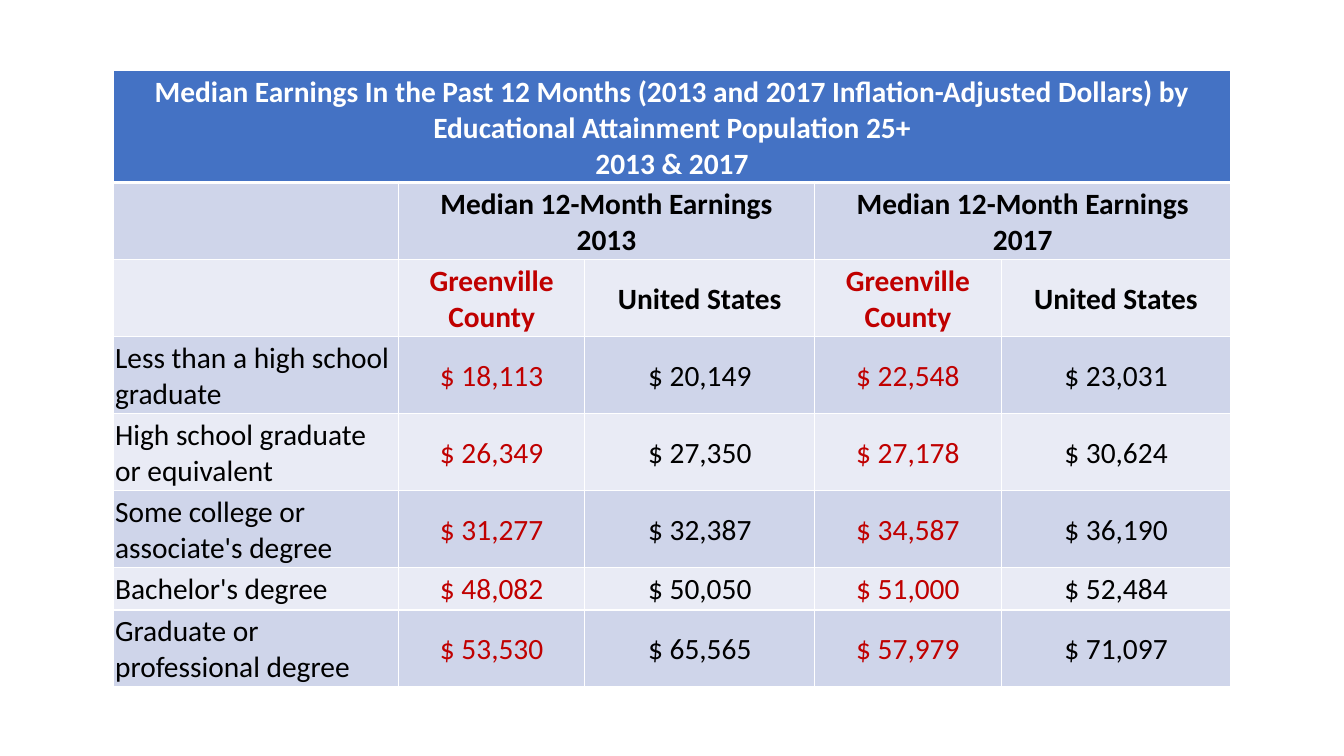
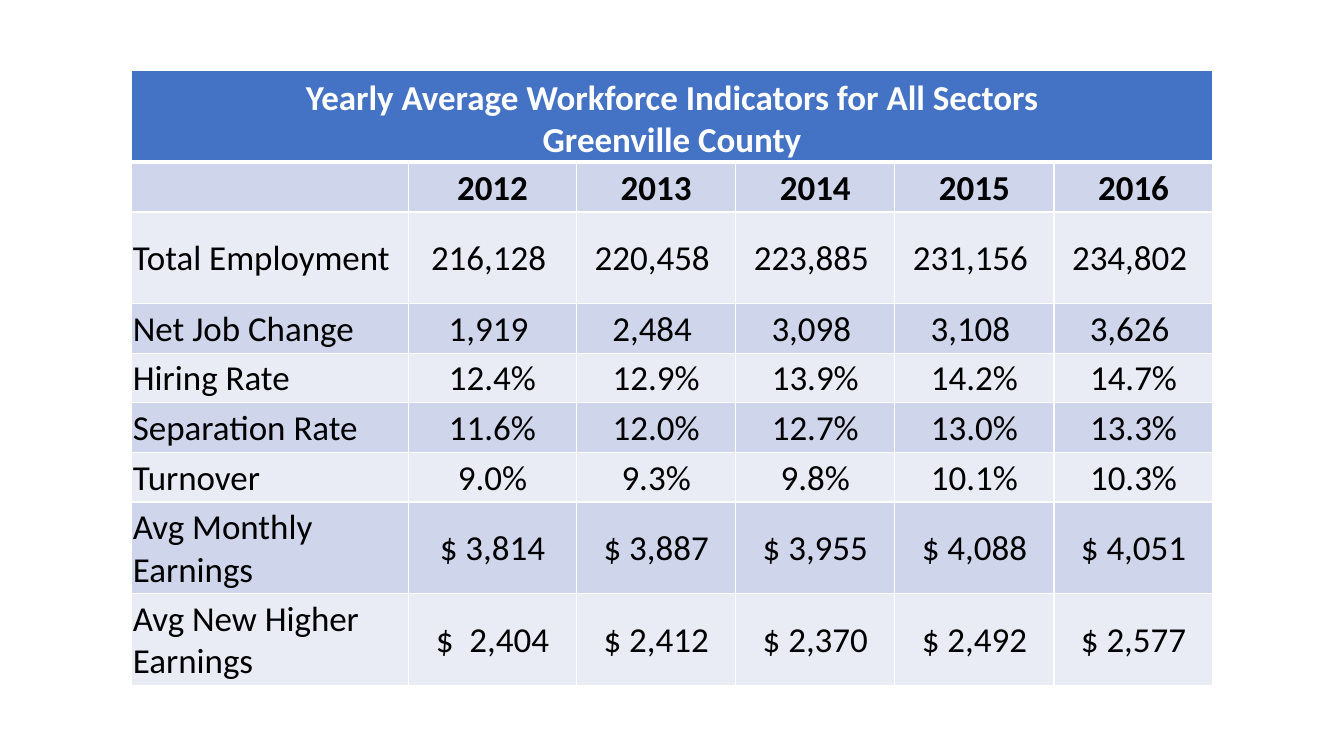
"""Build two slides of earnings and workforce tables for Greenville County."""
from dataclasses import dataclass

from lxml.etree import SubElement
from pptx import Presentation
from pptx.dml.color import RGBColor
from pptx.enum.text import MSO_ANCHOR, PP_ALIGN
from pptx.oxml.ns import qn
from pptx.util import Cm, Pt


@dataclass(frozen=True)
class Theme:
    font: str = "Calibri"
    header: str = "4472C4"
    bands: tuple = ("E9EBF5", "CFD5EA")
    white: str = "FFFFFF"
    text: str = "000000"
    accent: str = "C00000"
    earnings_size: int = 21
    workforce_size: int = 25
    thin: float = 1
    thick: float = 3


THEME = Theme()
SLIDE_WIDTH, SLIDE_HEIGHT = Cm(33.87), Cm(19.05)
TABLE_TOP = Cm(1.78)
INSET = Cm(0.05)

EARNINGS_ROWS = [
    ["Median Earnings In the Past 12 Months (2013 and 2017 Inflation-Adjusted Dollars) by "
     "Educational Attainment Population 25+\v2013 & 2017", "", "", "", ""],
    ["", "Median 12-Month Earnings\n2013", "", "Median 12-Month Earnings\n2017", ""],
    ["", "Greenville County", "United States", "Greenville County", "United States"],
    ["Less than a high school graduate", "$ 18,113", "$ 20,149", "$ 22,548", "$ 23,031"],
    ["High school graduate or equivalent", "$ 26,349", "$ 27,350", "$ 27,178", "$ 30,624"],
    ["Some college or associate's degree", "$ 31,277", "$ 32,387", "$ 34,587", "$ 36,190"],
    ["Bachelor's degree", "$ 48,082", "$ 50,050", "$ 51,000", "$ 52,484"],
    ["Graduate or professional degree", "$ 53,530", "$ 65,565", "$ 57,979", "$ 71,097"],
]
WORKFORCE_ROWS = [
    ["Yearly Average Workforce Indicators for All Sectors\nGreenville County", "", "", "", "", ""],
    ["", "2012", "2013", "2014", "2015", "2016"],
    ["Total Employment", "216,128 ", "220,458 ", "223,885 ", "231,156 ", "234,802 "],
    ["Net Job Change", "1,919 ", "2,484 ", "3,098 ", "3,108 ", "3,626 "],
    ["Hiring Rate", "12.4%", "12.9%", "13.9%", "14.2%", "14.7%"],
    ["Separation Rate", "11.6%", "12.0%", "12.7%", "13.0%", "13.3%"],
    ["Turnover", "9.0%", "9.3%", "9.8%", "10.1%", "10.3%"],
    ["Avg Monthly Earnings", "$ 3,814", "$ 3,887", "$ 3,955", "$ 4,088", "$ 4,051"],
    ["Avg New Higher Earnings", "$  2,404", "$ 2,412", "$ 2,370", "$ 2,492", "$ 2,577"],
]


def set_borders(cell, top, bottom):
    """Draw white lines on all four sides of a cell, with widths in points."""
    properties = cell._tc.get_or_add_tcPr()
    widths = {"a:lnL": THEME.thin, "a:lnR": THEME.thin, "a:lnT": top, "a:lnB": bottom}
    for position, (tag, width) in enumerate(widths.items()):
        line = SubElement(properties, qn(tag), w=str(Pt(width)))
        fill = SubElement(line, qn("a:solidFill"))
        SubElement(fill, qn("a:srgbClr"), val=THEME.white)
        properties.insert(position, line)


def write_cell(cell, text, size, color, bold, centered):
    """Put text in a cell and format its paragraphs."""
    cell.margin_left = cell.margin_right = cell.margin_top = INSET
    cell.margin_bottom = 0
    cell.text_frame.text = text
    for paragraph in cell.text_frame.paragraphs:
        paragraph.alignment = PP_ALIGN.CENTER if centered else PP_ALIGN.LEFT
        font = paragraph.font
        font.name, font.size, font.bold = THEME.font, Pt(size), bold
        font.color.rgb = RGBColor.from_string(color)


def add_banded_table(page, rows, widths, heights, size, heading_rows, spans=(), accents=()):
    """Add a centered table with a title row, bold headings and banded rows."""
    total = Cm(sum(widths))
    frame = page.shapes.add_table(len(rows), len(widths), (SLIDE_WIDTH - total) // 2,
                                  TABLE_TOP, total, Cm(sum(heights)))
    table = frame.table
    for column, width in zip(table.columns, widths):
        column.width = Cm(width)
    for row, height in zip(table.rows, heights):
        row.height = Cm(height)
    for r, texts in enumerate(rows):
        is_title = r == 0
        for c, text in enumerate(texts):
            cell = table.cell(r, c)
            cell.fill.solid()
            cell.fill.fore_color.rgb = RGBColor.from_string(
                THEME.header if is_title else THEME.bands[r % 2])
            cell.vertical_anchor = MSO_ANCHOR.BOTTOM if is_title else MSO_ANCHOR.MIDDLE
            set_borders(cell, THEME.thick if r == 1 else THEME.thin,
                        THEME.thick if is_title else THEME.thin)
            accented = c in accents and r >= heading_rows - 1
            color = THEME.white if is_title else THEME.accent if accented else THEME.text
            write_cell(cell, text, size, color, r < heading_rows, is_title or c > 0)
    for r, first, last in [(0, 0, len(widths) - 1), *spans]:
        table.cell(r, first).merge(table.cell(r, last))


def main():
    """Build and save the deck."""
    deck = Presentation()
    deck.slide_width, deck.slide_height = SLIDE_WIDTH, SLIDE_HEIGHT
    blank = deck.slide_layouts.get_by_name("Blank")
    add_banded_table(deck.slides.add_slide(blank), EARNINGS_ROWS,
                     widths=[7.19] + [4.7, 5.79] * 2,
                     heights=[2.82] + [1.94] * 5 + [1.07, 1.94],
                     size=THEME.earnings_size, heading_rows=3,
                     spans=[(1, 1, 2), (1, 3, 4)], accents=(1, 3))
    add_banded_table(deck.slides.add_slide(blank), WORKFORCE_ROWS,
                     widths=[6.99, 4.24] + [4.01] * 4,
                     heights=[2.31, 1.25, 2.31] + [1.25] * 4 + [2.31] * 2,
                     size=THEME.workforce_size, heading_rows=2)
    deck.save("out.pptx")


if __name__ == "__main__":
    main()
